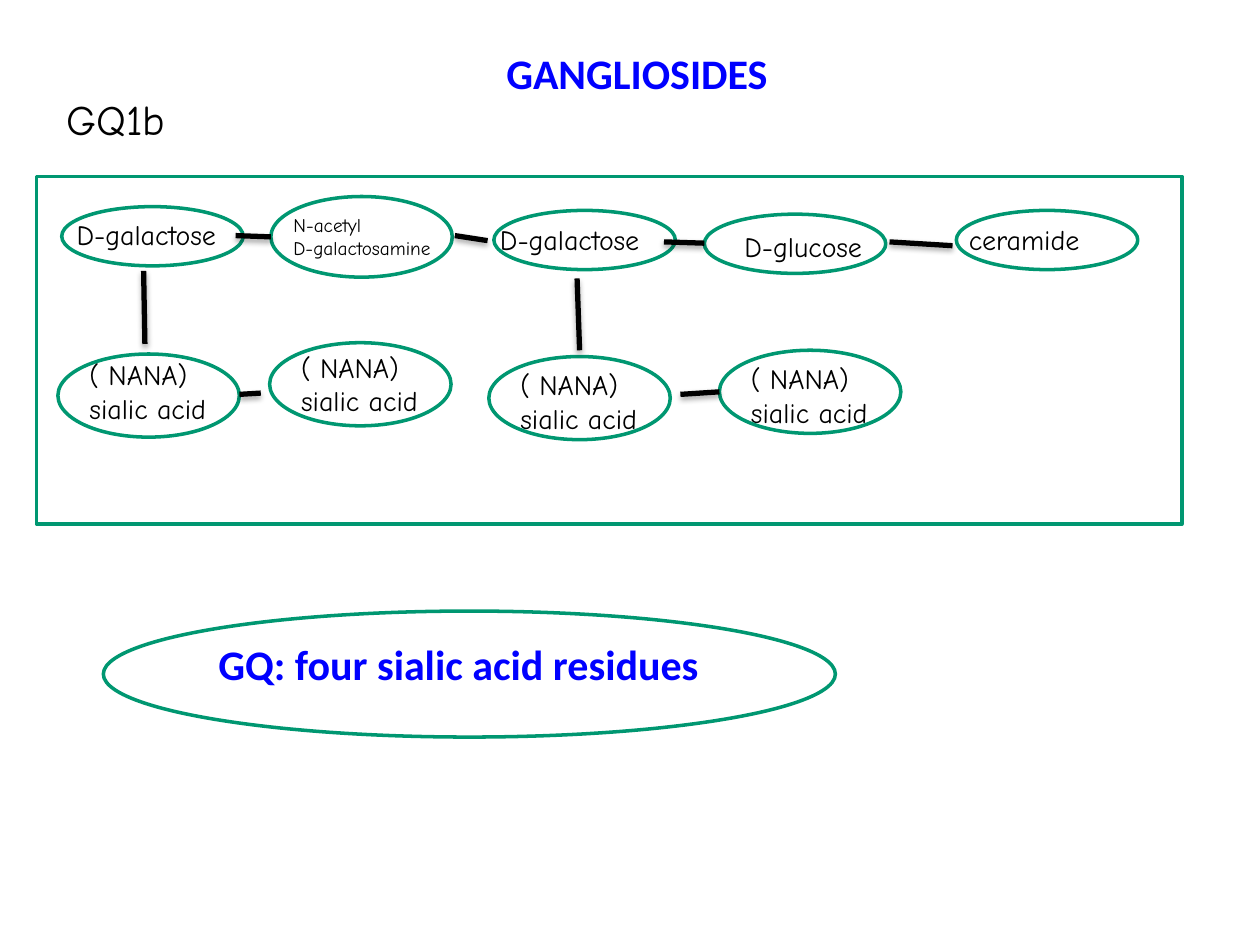
from dataclasses import dataclass

import lxml.etree
import pptx
import pptx.dml.color
import pptx.enum.shapes
import pptx.enum.text
import pptx.oxml.ns
import pptx.util

KIND = pptx.enum.shapes.MSO_SHAPE
ALIGN = pptx.enum.text.PP_ALIGN
COLS = 100


@dataclass(frozen=True)
class Theme:
    """Colours, fonts and type sizes of the slide."""
    blue: str = "0000FF"
    green: str = "009771"
    black: str = "000000"
    white: str = "FFFFFF"
    head: str = "Calibri"
    body: str = "Comic Neue"
    big: int = 24
    mid: int = 16
    small: int = 11


THEME = Theme()

SUGARS = [
    # ellipse x, y, height; label dx, dy, width; lines; size
    (2, 2.4, 4.7, 0.2, 0.4, 14.4, ["D-galactose"], THEME.mid),
    (18.6, 1.6, 6.4, 0.8, 0.8, 17.8, ["N-acetyl", "D-galactosamine"], THEME.small),
    (36.3, 2.7, 4.7, -0.5, 0.5, 14.4, ["D-galactose"], THEME.mid),
    (53, 3, 4.7, 2.2, 0.7, 12.2, ["D-glucose"], THEME.mid),
    (73, 2.7, 4.7, 0, 0.5, 24.1, ["ceramide"], THEME.mid),
]
ACIDS = [(1.7, 14.1, -0.2, 24.1), (18.5, 13.2, 0.1, 18),
         (35.9, 14.3, 0.4, 24.1), (54.2, 13.8, 0.4, 24.1)]
LINKS = [
    (67.7, 5.2, 72.7, 5.5), (33.2, 4.7, 35.8, 5.1), (49.8, 5.2, 53, 5.3),
    (15.8, 4.7, 18.6, 4.8), (43.1, 13.8, 42.9, 8.1), (8.6, 13.3, 8.5, 7.5),
    (16.1, 17.3, 17.8, 17.2), (51.1, 17.3, 54.2, 17.1),
]


def unit(num):
    """Turn grid columns into a length; a row is as tall as a column is wide."""
    return pptx.util.Inches(num * 10 / COLS)


def tint(code):
    """Give the colour for a hex code."""
    return pptx.dml.color.RGBColor.from_string(code)


def label(slide, box, lines, font, size, hue, bold=False, align=ALIGN.LEFT,
          wrap=True, pad=1, fill=None):
    """Place lines of text in a box."""
    item = slide.shapes.add_textbox(*map(unit, box))
    if fill:
        item.fill.solid()
        item.fill.fore_color.rgb = tint(fill)
    frame = item.text_frame
    frame.word_wrap = wrap
    frame.margin_left = unit(pad)
    frame.text = "\n".join(lines)
    for para in frame.paragraphs:
        para.alignment = align
        para.font.name, para.font.size = font, pptx.util.Pt(size)
        para.font.bold, para.font.color.rgb = bold, tint(hue)


def ring(slide, kind, box):
    """Place an unfilled green outline."""
    item = slide.shapes.add_shape(kind, *map(unit, box))
    item.shadow.inherit = False
    item.fill.background()
    item.line.color.rgb = tint(THEME.green)
    item.line.width = pptx.util.Pt(2)


def link(slide, ends):
    """Draw a thick bond with a soft shadow."""
    item = slide.shapes.add_connector(
        pptx.enum.shapes.MSO_CONNECTOR.STRAIGHT, *map(unit, ends))
    item.line.color.rgb = tint(THEME.black)
    item.line.width = pptx.util.Pt(3)
    tag = pptx.oxml.ns.qn
    node = item.element.spPr
    for name, attrs in (
            ("a:effectLst", {}),
            ("a:outerShdw", {"blurRad": "40000", "dist": "23000",
                             "dir": "5400000", "rotWithShape": "0"}),
            ("a:srgbClr", {"val": THEME.black}),
            ("a:alpha", {"val": "35000"})):
        node = lxml.etree.SubElement(node, tag(name), attrs)


def header(slide, box):
    """Place the title and the name of the molecule."""
    x, y, w, h = box
    label(slide, (x + 34.9, y, 23, h), ["GANGLIOSIDES"], THEME.head,
          THEME.big, THEME.blue, bold=True, wrap=False)
    label(slide, (x, y + 3.6, w, h), ["GQ1b"], THEME.body, THEME.big, THEME.black)


def chain(slide, box):
    """Place the framed chain of sugars and sialic acids."""
    left, top = box[:2]
    wide = 14.4
    for x, y, h, dx, dy, w, lines, size in SUGARS:
        x, y = left + x, top + y
        label(slide, (x + dx, y + dy, w, 4), lines, THEME.body, size,
              THEME.black, fill=THEME.white)
        ring(slide, KIND.OVAL, (x, y, wide, h))
    for x, y, dy, w in ACIDS:
        x, y = left + x, top + y
        label(slide, (x - 2.2, y + dy, w, 6.4), ["( NANA)", "sialic acid"],
              THEME.body, THEME.mid, THEME.black, pad=4.7, fill=THEME.white)
        ring(slide, KIND.OVAL, (x, y, wide, 6.6))
    for x, y, tox, toy in LINKS:
        link(slide, (left + x, top + y, left + tox, top + toy))
    ring(slide, KIND.RECTANGLE, box)


def note(slide, box):
    """Place the ringed summary."""
    x, y = box[:2]
    label(slide, (x + 3.2, y + 1.7, 50, 5), ["GQ: four sialic acid residues"],
          THEME.head, THEME.big, THEME.blue, bold=True, align=ALIGN.CENTER)
    ring(slide, KIND.OVAL, box)


def main():
    """Build and save the slide."""
    deck = pptx.Presentation()
    deck.slide_width, deck.slide_height = unit(COLS), unit(75)
    slide = deck.slides.add_slide(deck.slide_layouts[6])
    header(slide, (4.3, 3.3, 50, 5))
    chain(slide, (2.9, 14, 90.9, 27.6))
    note(slide, (8.2, 48.5, 58.1, 10))
    deck.save("out.pptx")


if __name__ == "__main__":
    main()
